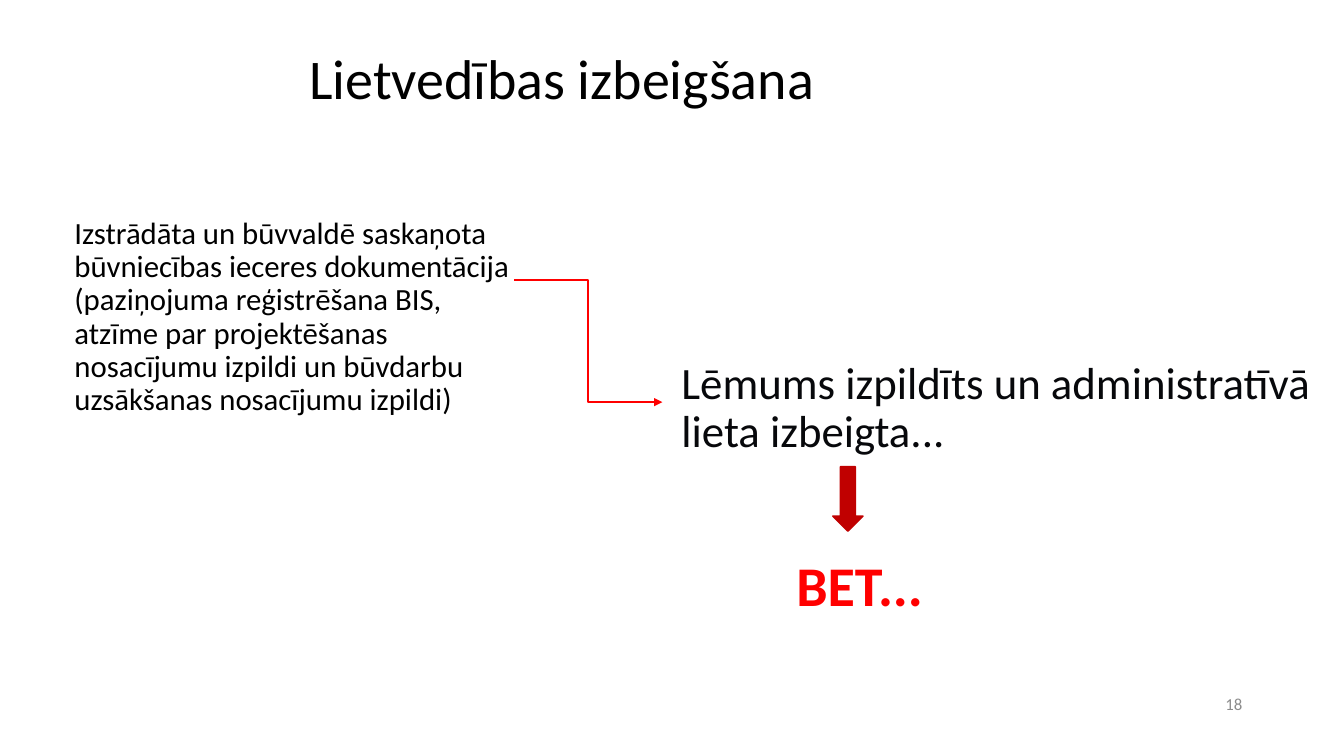
from pptx import Presentation
from pptx.dml.color import RGBColor
from pptx.enum.shapes import MSO_CONNECTOR as Connector, MSO_SHAPE as Shape
from pptx.enum.text import MSO_ANCHOR as Anchor, PP_ALIGN as Align
from pptx.oxml.ns import qn
from pptx.util import Inches, Pt
from lxml.etree import SubElement

FONT = "Calibri"
RED, DARK_RED = "FF0000", "C00000"
BLACK, INK, GREY = "000000", "07080B", "8C8C8C"


def color(hex_value):
    return RGBColor.from_string(hex_value)


def inches(*lengths):
    return [Inches(length) for length in lengths]


def add_text(slide, box, text, size, hex_value, align=Align.LEFT,
             anchor=Anchor.TOP, bold=False, spacing=1.0):
    text_frame = slide.shapes.add_textbox(*inches(*box)).text_frame
    text_frame.word_wrap = True
    text_frame.vertical_anchor = anchor
    text_frame.text = text
    paragraph = text_frame.paragraphs[0]
    paragraph.alignment = align
    paragraph.line_spacing = spacing
    font = paragraph.runs[0].font
    font.name, font.size, font.bold = FONT, Pt(size), bold
    font.color.rgb = color(hex_value)


def add_elbow_arrow(slide, start, end):
    connector = slide.shapes.add_connector(
        Connector.ELBOW, *inches(*start, *end))
    connector.line.color.rgb = color(RED)
    connector.line.width = Pt(1.5)
    SubElement(connector.line._get_or_add_ln(), qn("a:tailEnd"), type="triangle")
    SubElement(connector._element.spPr, qn("a:effectLst"))


def add_condition(slide, box):
    """Condition on the left and the elbow arrow leading out of it."""
    left, top, width, height = box
    add_text(slide, box,
             "Izstrādāta un būvvaldē saskaņota būvniecības ieceres "
             "dokumentācija (paziņojuma reģistrēšana BIS, atzīme par "
             "projektēšanas nosacījumu izpildi un būvdarbu uzsākšanas "
             "nosacījumu izpildi)",
             22, BLACK, anchor=Anchor.MIDDLE, spacing=0.9)
    start_x, start_y = left + width - 0.2, top + 2.68
    add_elbow_arrow(slide, (start_x, start_y), (start_x + 1.47, start_y + 1.21))


def add_outcome(slide, box):
    """Outcome on the right, with a block arrow down to the caveat."""
    left, top, width, height = box
    add_text(slide, box, "Lēmums izpildīts un administratīvā lieta izbeigta...",
             32, INK, anchor=Anchor.MIDDLE, spacing=0.9)

    arrow = slide.shapes.add_shape(
        Shape.DOWN_ARROW, *inches(left + 1.6, top + 3.31, 0.3, 0.64))
    arrow.shadow.inherit = False
    arrow.fill.solid()
    arrow.fill.fore_color.rgb = color(DARK_RED)
    arrow.line.color.rgb = color(DARK_RED)
    arrow.line.width = Pt(1)

    add_text(slide, (left + 0.82, top + 4.09, 2.09, 0.77), "BET...",
             40, RED, align=Align.CENTER, bold=True)


def main():
    presentation = Presentation()
    presentation.slide_width, presentation.slide_height = inches(13.33, 7.5)
    slide = presentation.slides.add_slide(presentation.slide_layouts[6])

    # Title
    add_text(slide, (2.97, 0.38, 6.02, 0.77), "Lietvedības izbeigšana", 40, BLACK)
    # Body
    add_condition(slide, (0.64, 0.1, 4.66, 6.1))
    add_outcome(slide, (6.66, 1.32, 7.12, 5.47))
    # Slide number
    add_text(slide, (9.42, 6.78, 3, 0.4), "18", 12, GREY,
             align=Align.RIGHT, anchor=Anchor.MIDDLE)

    presentation.save("out.pptx")


if __name__ == "__main__":
    main()
